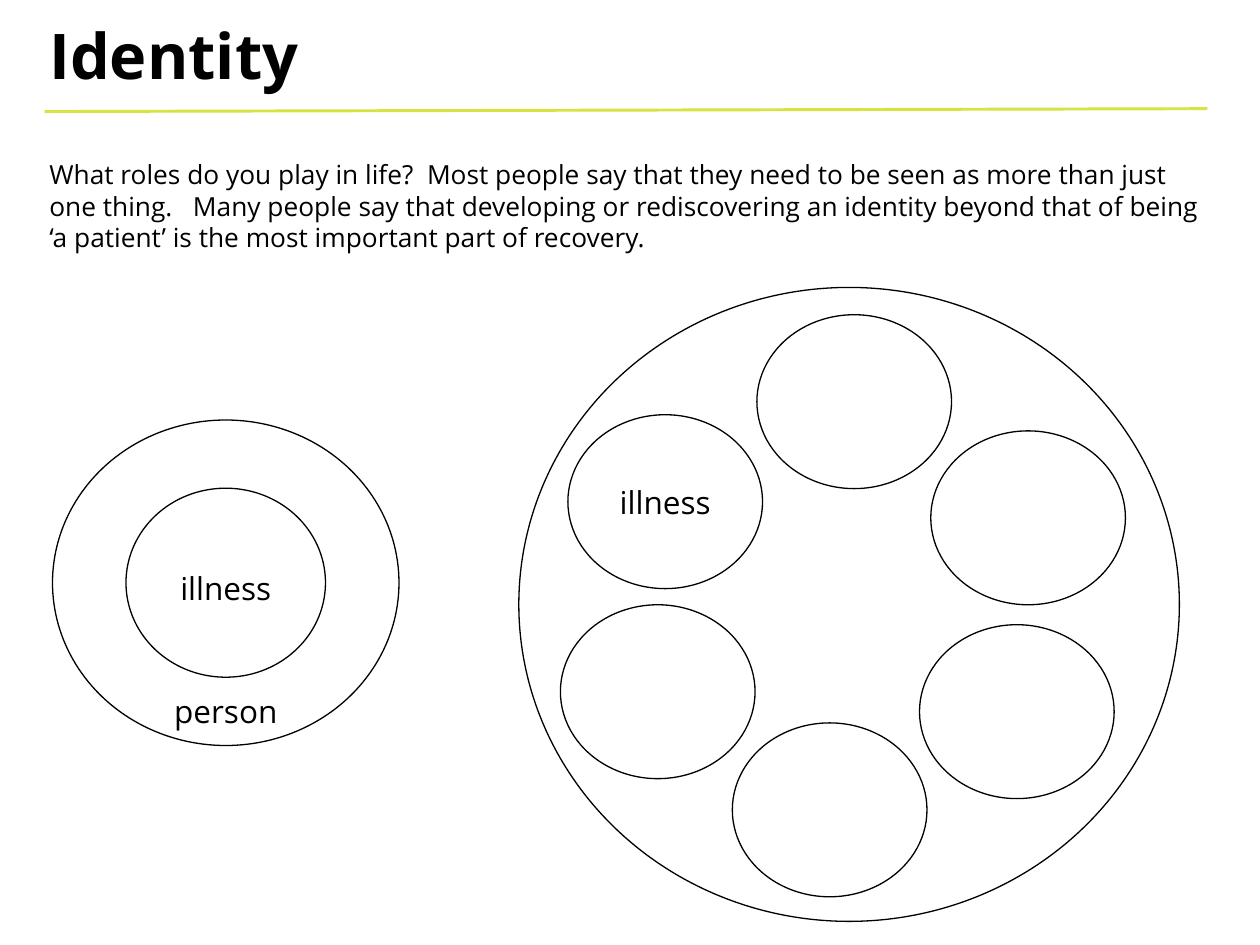
from pptx import Presentation
from pptx.dml.color import RGBColor
from pptx.enum.shapes import MSO_CONNECTOR, MSO_SHAPE
from pptx.enum.text import MSO_ANCHOR, PP_ALIGN
from pptx.oxml.ns import qn
from pptx.util import Pt


def colour(hex_code):
    return RGBColor.from_string(hex_code)


class SlideBuilder:
    font = "Open Sans"
    ink = "000000"
    paper = "FFFFFF"
    accent = "D6E342"

    def __init__(self, slide):
        self.slide = slide

    def set_text(self, shape, text, size, bold=False, align=PP_ALIGN.LEFT, anchor=MSO_ANCHOR.TOP):
        frame = shape.text_frame
        frame.text = text
        frame.word_wrap = True
        frame.vertical_anchor = anchor
        frame.margin_left = frame.margin_right = Pt(9.6)
        frame.margin_top = frame.margin_bottom = Pt(4.8)
        para = frame.paragraphs[0]
        para.alignment = align
        span = para.runs[0]
        span.font.name = self.font
        span.font.size = Pt(size)
        span.font.bold = bold
        span.font.color.rgb = colour(self.ink)

    def text(self, left, top, width, height, text, size, **style):
        box = self.slide.shapes.add_textbox(Pt(left), Pt(top), Pt(width), Pt(height))
        self.set_text(box, text, size, **style)

    def circle(self, left, top, width, height, filled=True, label=None):
        shape = self.slide.shapes.add_shape(
            MSO_SHAPE.OVAL, Pt(left), Pt(top), Pt(width), Pt(height))
        shape.shadow.inherit = False
        if filled:
            shape.fill.solid()
            shape.fill.fore_color.rgb = colour(self.paper)
        else:
            shape.fill.background()
        shape.line.color.rgb = colour(self.ink)
        shape.line.width = Pt(1)
        if label:
            self.set_text(shape, label, 24, align=PP_ALIGN.CENTER, anchor=MSO_ANCHOR.MIDDLE)

    def rule(self, x1, y1, x2, y2):
        line = self.slide.shapes.add_connector(
            MSO_CONNECTOR.STRAIGHT, Pt(x1), Pt(y1), Pt(x2), Pt(y2))
        line.line.color.rgb = colour(self.accent)
        line.line.width = Pt(2.25)
        properties = line._element.spPr
        properties.append(properties.makeelement(qn("a:effectLst"), {}))


def main():
    deck = Presentation()
    deck.slide_width, deck.slide_height = Pt(960), Pt(720)
    page = SlideBuilder(deck.slides.add_slide(deck.slide_layouts[6]))

    # Heading and introduction
    page.text(28, 8, 886, 64, "Identity", 48, bold=True)
    page.rule(34, 85, 920, 82.8)
    page.text(28, 116, 895, 82,
              "What roles do you play in life?  Most people say that they need to be seen "
              "as more than just one thing.   Many people say that developing or "
              "rediscovering an identity beyond that of being ‘a patient’ is the most "
              "important part of recovery.", 20)

    # Person defined by illness
    page.circle(40, 320, 264, 248, filled=False)
    page.circle(96, 372, 152, 144, filled=False)
    for label, top in (("illness", 429), ("person", 522.7)):
        page.text(112, top, 120, 39, label, 24, align=PP_ALIGN.CENTER)

    # Person with many roles, of which illness is one
    page.circle(395.3, 219, 503.3, 483)
    roles = [
        (576.7, 239.8, None),
        (709.2, 328.3, None),
        (700.6, 476, None),
        (558, 550.8, None),
        (427, 460.8, None),
        (432.7, 316, "illness"),
    ]
    for left, top, label in roles:
        page.circle(left, top, 148.3, 132.5, label=label)

    deck.save("out.pptx")


if __name__ == "__main__":
    main()
